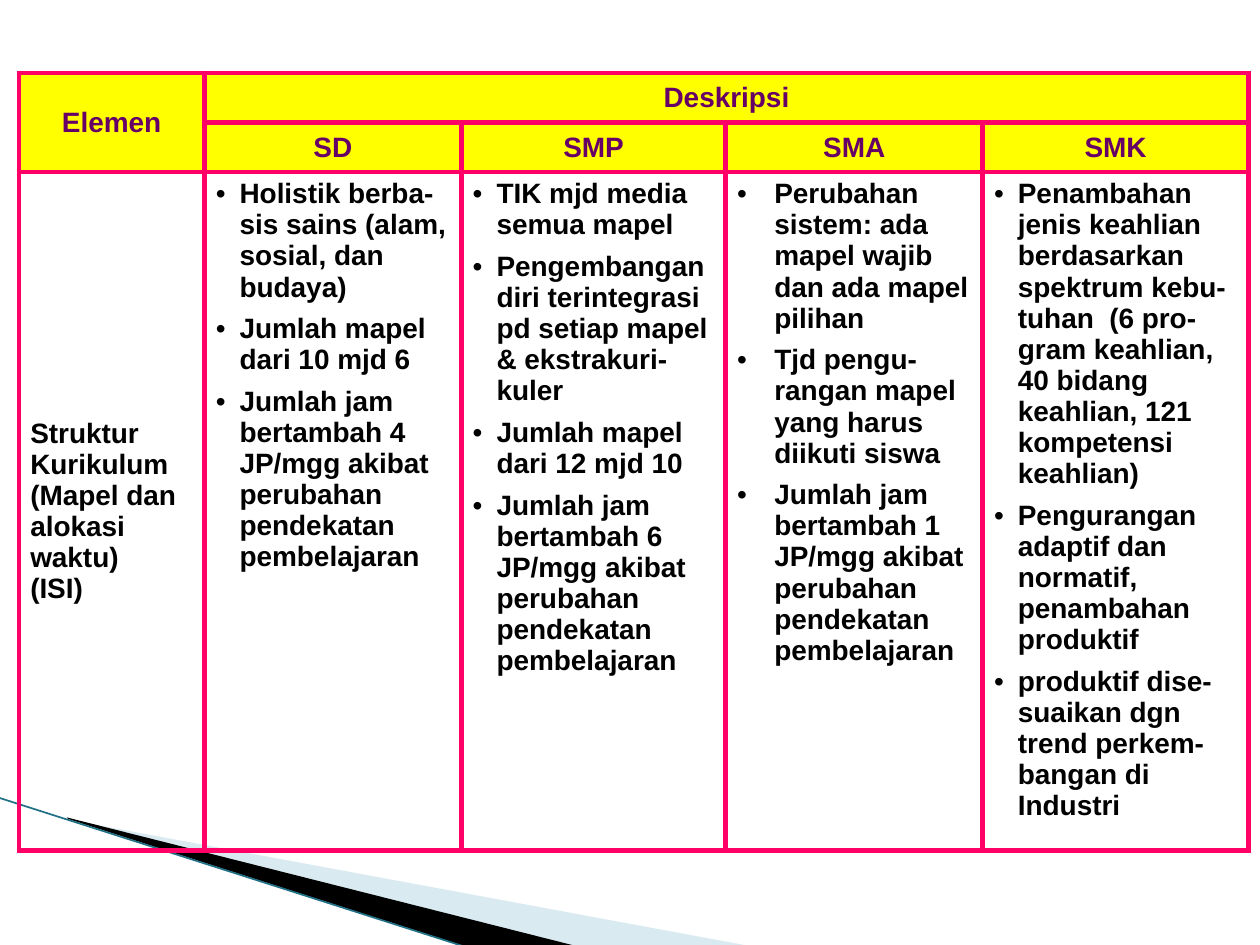
"""Build the curriculum structure slide with its comparison table."""
from dataclasses import dataclass

from pptx import Presentation
from pptx.dml.color import RGBColor
from pptx.enum.shapes import MSO_CONNECTOR as Connector
from pptx.enum.text import MSO_ANCHOR as Anchor, PP_ALIGN as Align
from pptx.oxml.ns import qn
from pptx.util import Cm, Pt
from lxml.etree import SubElement


@dataclass(frozen=True)
class Theme:
    font: str = "Arial"
    size: int = 16
    border_width: float = 3
    sweep_line_width: float = 0.95
    paragraph_gap: int = 6
    header_fill: str = "FFFF00"
    header_text: str = "660066"
    body_text: str = "000000"
    border: str = "FF0066"
    pale_sweep: str = "A0CBDC"
    dark_sweep: str = "000000"
    sweep_line: str = "1F7085"


HEADINGS = ["SD", "SMP", "SMA", "SMK"]
ELEMENT = ["Struktur Kurikulum (Mapel dan alokasi waktu)", "(ISI)"]
HOURS = "Jumlah jam bertambah {} JP/mgg akibat perubahan pendekatan pembelajaran"
DESCRIPTIONS = [
    ["Holistik berba-sis sains (alam, sosial, dan budaya)",
     "Jumlah mapel dari 10 mjd 6",
     HOURS.format(4)],
    ["TIK mjd media semua mapel",
     "Pengembangan diri terintegrasi pd setiap mapel & ekstrakuri-kuler",
     "Jumlah mapel dari 12 mjd 10",
     HOURS.format(6)],
    ["Perubahan sistem: ada mapel wajib dan ada mapel pilihan",
     "Tjd pengu-rangan mapel yang harus diikuti siswa",
     HOURS.format(1)],
    ["Penambahan jenis keahlian berdasarkan spektrum kebu-tuhan  (6 pro-gram "
     "keahlian, 40 bidang keahlian, 121 kompetensi keahlian)",
     "Pengurangan adaptif dan normatif, penambahan produktif",
     "produktif dise-suaikan dgn trend perkem-bangan di Industri"],
]
BULLET_INDENTS = [0.48, 0.48, 0.75, 0.48]
COLUMN_WIDTHS = [3.74, 5.18, 5.33, 5.18, 5.36]
ROW_HEIGHTS = [1, 1, 13.67]


class SlideBuilder:
    """Draw styled elements on the current slide."""

    def __init__(self, slide, theme):
        self.slide = slide
        self.theme = theme

    def sweep(self, points, color, opacity=None):
        """Add a filled outline through points given in centimetres."""
        start, *rest = [(Cm(x), Cm(y)) for x, y in points]
        builder = self.slide.shapes.build_freeform(*start)
        builder.add_line_segments(rest, close=True)
        shape = builder.convert_to_shape()
        shape.shadow.inherit = False
        shape.line.fill.background()
        shape.fill.solid()
        shape.fill.fore_color.rgb = RGBColor.from_string(color)
        if opacity is not None:
            color_element = next(shape._element.spPr.iter(qn("a:srgbClr")))
            SubElement(color_element, qn("a:alpha"), val=str(opacity * 1000))

    def line(self, start, end, color, width):
        """Add a straight line between two points in centimetres."""
        ends = [Cm(value) for value in (*start, *end)]
        connector = self.slide.shapes.add_connector(Connector.STRAIGHT, *ends)
        connector.line.color.rgb = RGBColor.from_string(color)
        connector.line.width = Pt(width)
        SubElement(connector._element.spPr, qn("a:effectLst"))

    def table(self, left, top, widths, heights):
        """Add a plain table with the given column widths and row heights."""
        frame = self.slide.shapes.add_table(
            len(heights), len(widths), Cm(left), Cm(top),
            Cm(sum(widths)), Cm(sum(heights)))
        table = frame.table
        table.first_row = table.horz_banding = False
        for column, width in zip(table.columns, widths):
            column.width = Cm(width)
        for row, height in zip(table.rows, heights):
            row.height = Cm(height)
        for cell in table.iter_cells():
            self.borders(cell)
            cell.fill.background()
        return table

    def borders(self, cell):
        """Give a cell a solid border on all four sides."""
        properties = cell._tc.get_or_add_tcPr()
        for side in ("lnL", "lnR", "lnT", "lnB"):
            line = SubElement(properties, qn(f"a:{side}"),
                              w=str(Pt(self.theme.border_width)))
            fill = SubElement(line, qn("a:solidFill"))
            SubElement(fill, qn("a:srgbClr"), val=self.theme.border)

    def cell(self, cell, texts, color, anchor=Anchor.MIDDLE, align=Align.LEFT,
             fill=None, bullet_indent=None):
        """Fill a cell with one paragraph for each text."""
        layout = {"vertical_anchor": anchor,
                  "margin_left": Cm(0.23), "margin_right": Cm(0.23),
                  "margin_top": Cm(0.13), "margin_bottom": Cm(0.13)}
        for name, value in layout.items():
            setattr(cell, name, value)
        if fill:
            cell.fill.solid()
            cell.fill.fore_color.rgb = RGBColor.from_string(fill)
        text_frame = cell.text_frame
        for index, text in enumerate(texts):
            paragraph = text_frame.add_paragraph() if index else text_frame.paragraphs[0]
            paragraph.text = text
            paragraph.alignment = align
            if bullet_indent:
                if index:
                    paragraph.space_before = Pt(self.theme.paragraph_gap)
                self.bullet(paragraph, bullet_indent)
            self.font(paragraph.runs[0].font, color)

    def bullet(self, paragraph, indent):
        """Give a paragraph a hanging round bullet."""
        properties = paragraph._p.get_or_add_pPr()
        properties.set("marL", str(Cm(indent)))
        properties.set("indent", str(-Cm(indent)))
        SubElement(properties, qn("a:buFont"), typeface=self.theme.font)
        SubElement(properties, qn("a:buChar"), char="•")

    def font(self, font, color):
        """Apply the theme's type style in one colour."""
        formats = {"name": self.theme.font, "size": Pt(self.theme.size), "bold": True}
        for name, value in formats.items():
            setattr(font, name, value)
        font.color.rgb = RGBColor.from_string(color)


def main():
    """Create and save the presentation."""
    presentation = Presentation()
    presentation.slide_width = Cm(25.4)
    presentation.slide_height = Cm(19.05)
    theme = Theme()
    slide = presentation.slides.add_slide(presentation.slide_layouts[6])
    builder = SlideBuilder(slide, theme)

    builder.sweep([(1.4, 16.53), (15.11, 19.07), (11.58, 19.07), (1.4, 16.51)],
                  theme.pale_sweep, opacity=40)
    builder.sweep([(1.35, 16.48), (11.61, 19.07), (9.45, 19.1), (1.37, 16.51)],
                  theme.dark_sweep)
    builder.line((-0.03, 16.08), (9.42, 19.1), theme.sweep_line, theme.sweep_line_width)

    table = builder.table(0.38, 1.47, COLUMN_WIDTHS, ROW_HEIGHTS)
    table.cell(0, 0).merge(table.cell(1, 0))
    table.cell(0, 1).merge(table.cell(0, 4))
    header = {"color": theme.header_text, "align": Align.CENTER,
              "fill": theme.header_fill}
    builder.cell(table.cell(0, 0), ["Elemen"], **header)
    builder.cell(table.cell(0, 1), ["Deskripsi"], **header)
    builder.cell(table.cell(2, 0), ELEMENT, theme.body_text)
    levels = zip(HEADINGS, DESCRIPTIONS, BULLET_INDENTS)
    for column, (heading, items, indent) in enumerate(levels, start=1):
        builder.cell(table.cell(1, column), [heading], **header)
        builder.cell(table.cell(2, column), items, theme.body_text,
                     anchor=Anchor.TOP, bullet_indent=indent)

    presentation.save("out.pptx")


if __name__ == "__main__":
    main()
